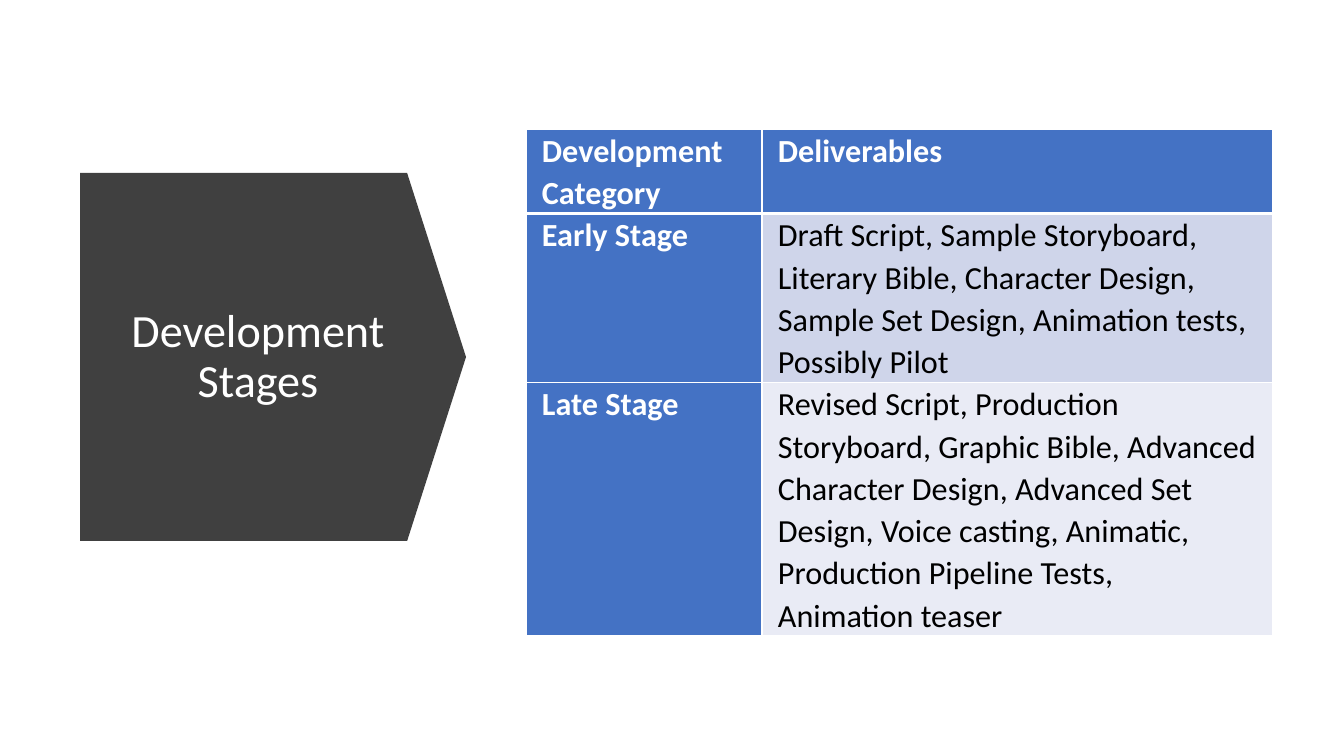
from lxml.etree import SubElement
from pptx import Presentation
from pptx.dml.color import RGBColor
from pptx.enum.shapes import MSO_SHAPE
from pptx.enum.text import MSO_ANCHOR, MSO_AUTO_SIZE, PP_ALIGN
from pptx.oxml.ns import qn
from pptx.util import Emu, Pt

SCALE = 914400 / 100.8
WHITE, BLACK, DARK, BLUE = "FFFFFF", "000000", "404040", "4472C4"
COLS = [236, 511]
ROWS = [83, 167, 249]
BANDS = [BLUE, "CFD5EA", "E9EBF5"]
STAGES = [
    ("Development Category", "Deliverables"),
    ("Early Stage",
     "Draft Script, Sample Storyboard, Literary Bible, Character Design, "
     "Sample Set Design, Animation tests, Possibly Pilot"),
    ("Late Stage",
     "Revised Script, Production Storyboard, Graphic Bible, Advanced "
     "Character Design, Advanced Set Design, Voice casting, Animatic, "
     "Production Pipeline Tests, Animation teaser"),
]


def px(num):
    return Emu(round(num * SCALE))


def paint(fill, tone):
    fill.solid()
    fill.fore_color.rgb = RGBColor.from_string(tone)


def write(frame, text, size=23, tone=WHITE, bold=False,
          align=PP_ALIGN.LEFT, space=1.07):
    frame.word_wrap = True
    para = frame.paragraphs[0]
    para.alignment = align
    para.line_spacing = space
    run = para.add_run()
    run.text = text
    run.font.name = "Calibri"
    run.font.size = Pt(size)
    run.font.bold = bold
    run.font.color.rgb = RGBColor.from_string(tone)


def edge(cell, side, width):
    line = SubElement(cell._tc.get_or_add_tcPr(), qn("a:ln" + side),
                      w=str(Pt(width)))
    fill = SubElement(line, qn("a:solidFill"))
    SubElement(fill, qn("a:srgbClr"), val=WHITE)


def add_arrow(slide):
    arrow = slide.shapes.add_shape(MSO_SHAPE.DOWN_ARROW,
                                   px(89), px(164), px(368), px(386))
    arrow.rotation = 270
    arrow.adjustments[0] = 1
    arrow.adjustments[1] = 0.16
    arrow.shadow.inherit = False
    paint(arrow.fill, DARK)
    arrow.line.fill.background()
    slide.shapes._spTree.insert(2, arrow._element)


def add_title(slide, text):
    title = slide.shapes.title
    title.left, title.top = px(113), px(217)
    title.width, title.height = px(290), px(281)
    frame = title.text_frame
    frame.auto_size = MSO_AUTO_SIZE.NONE
    frame.vertical_anchor = MSO_ANCHOR.MIDDLE
    write(frame, text, size=33, align=PP_ALIGN.CENTER, space=0.9)


def add_grid(slide):
    grid = slide.shapes.add_table(len(ROWS), len(COLS), px(526), px(129),
                                  px(sum(COLS)), px(sum(ROWS))).table
    for col, width in zip(grid.columns, COLS):
        col.width = px(width)
    for row, height in zip(grid.rows, ROWS):
        row.height = px(height)
    for i, texts in enumerate(STAGES):
        for j, text in enumerate(texts):
            cell = grid.cell(i, j)
            head = i == 0 or j == 0
            cell.margin_left = cell.margin_right = px(16)
            cell.margin_top = cell.margin_bottom = 0
            widths = {"L": 1, "R": 1, "T": 3 if i == 1 else 1,
                      "B": 3 if i == 0 else 1}
            for side, width in widths.items():
                edge(cell, side, width)
            paint(cell.fill, BLUE if head else BANDS[i])
            write(cell.text_frame, text, bold=head,
                  tone=WHITE if head else BLACK)


def main():
    deck = Presentation()
    deck.slide_width, deck.slide_height = px(1344), px(756)
    slide = deck.slides.add_slide(deck.slide_layouts[5])
    add_arrow(slide)
    add_title(slide, "Development Stages")
    add_grid(slide)
    deck.save("out.pptx")


main()
